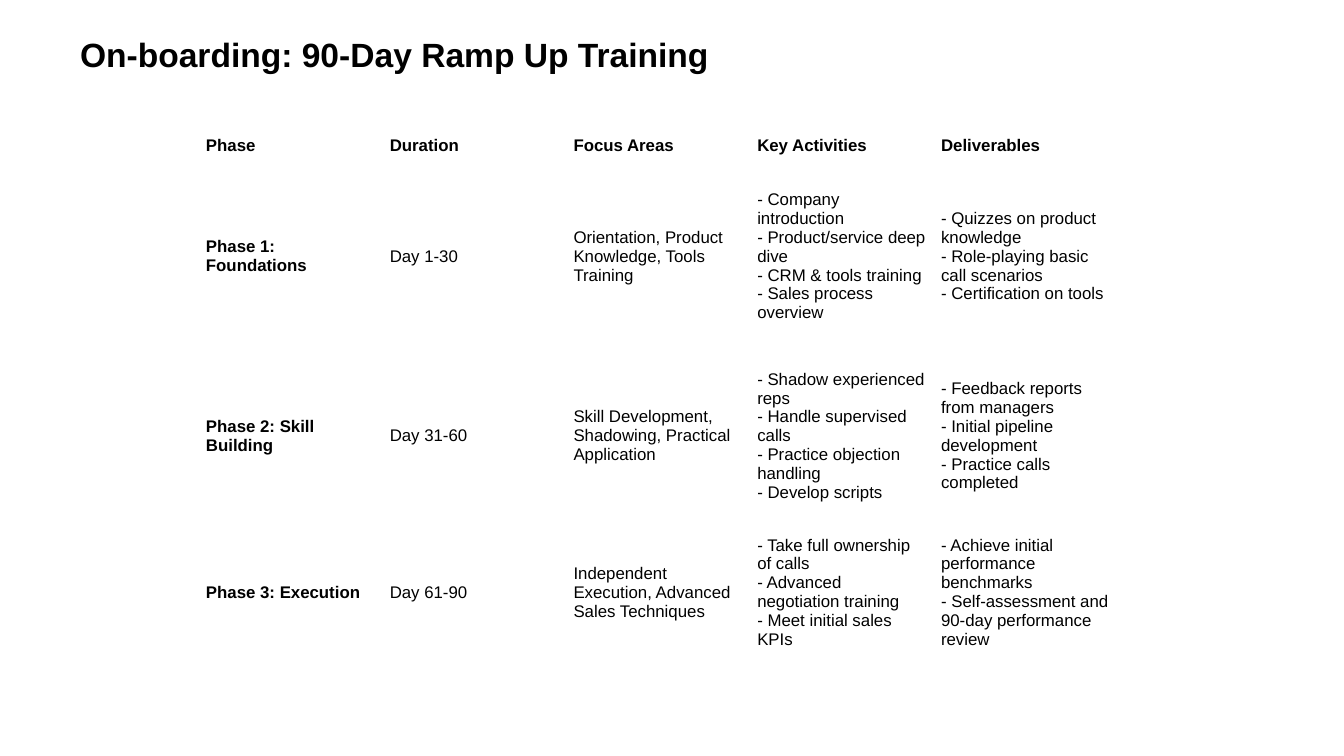
from pptx import Presentation
from pptx.dml.color import RGBColor
from pptx.enum.text import MSO_ANCHOR, PP_ALIGN
from pptx.util import Emu, Pt

MIDDLE = MSO_ANCHOR.MIDDLE
TOP = MSO_ANCHOR.TOP
LEFT = PP_ALIGN.LEFT

BLACK = RGBColor(0x00, 0x00, 0x00)
FONT = "Arial"
EMU_PER_PX = 9144000 / 1344
TITLE_ONLY = 5

TITLE_BOX = (67, 24, 1210, 83)
TABLE_BOX = (199, 130, 919, 535)
ROW_HEIGHTS = (31, 191, 168, 145)

HEADINGS = ("Phase", "Duration", "Focus Areas", "Key Activities", "Deliverables")
PHASES = (
    ("Phase 1: Foundations", "Day 1-30",
     "Orientation, Product Knowledge, Tools Training",
     "- Company introduction\n- Product/service deep dive\n"
     "- CRM & tools training\n- Sales process overview",
     "- Quizzes on product knowledge\n- Role-playing basic call scenarios\n"
     "- Certification on tools"),
    ("Phase 2: Skill Building", "Day 31-60",
     "Skill Development, Shadowing, Practical Application",
     "- Shadow experienced reps\n- Handle supervised calls\n"
     "- Practice objection handling\n- Develop scripts",
     "- Feedback reports from managers\n- Initial pipeline development\n"
     "- Practice calls completed"),
    ("Phase 3: Execution", "Day 61-90",
     "Independent Execution, Advanced Sales Techniques",
     "- Take full ownership of calls\n- Advanced negotiation training\n"
     "- Meet initial sales KPIs",
     "- Achieve initial performance benchmarks\n"
     "- Self-assessment and 90-day performance review"),
)


def px(length):
    return Emu(round(length * EMU_PER_PX))


def write(paragraph, text, size, bold):
    """Add one run per line, with line breaks between them."""
    paragraph.alignment = LEFT
    paragraph.line_spacing = 1.0
    paragraph.space_before = Pt(0)
    for index, line in enumerate(text.split("\n")):
        if index:
            paragraph.add_line_break()
        run = paragraph.add_run()
        run.text = line
        run.font.name = FONT
        run.font.size = Pt(size)
        run.font.bold = bold
        run.font.color.rgb = BLACK


def add_title(slide, box, text):
    title = slide.shapes.title
    title.left, title.top, title.width, title.height = map(px, box)
    frame = title.text_frame
    frame.word_wrap = True
    frame.vertical_anchor = TOP
    frame.margin_left = frame.margin_right = px(13)
    frame.margin_top = frame.margin_bottom = px(10)
    write(frame.paragraphs[0], text, 18, True)


def add_phase_table(slide, box, rows):
    table = slide.shapes.add_table(len(rows), len(rows[0]), *map(px, box)).table
    table.first_row = table.horz_banding = False
    for column in table.columns:
        column.width = px(box[2] / len(rows[0]))
    for row, height in zip(table.rows, ROW_HEIGHTS):
        row.height = px(height)
    for row_index, texts in enumerate(rows):
        for column_index, text in enumerate(texts):
            cell = table.cell(row_index, column_index)
            cell.fill.background()
            cell.vertical_anchor = MIDDLE
            cell.margin_left = cell.margin_right = px(7)
            cell.margin_top = cell.margin_bottom = px(4)
            bold = row_index == 0 or column_index == 0
            write(cell.text_frame.paragraphs[0], text, 9, bold)


def main():
    presentation = Presentation()
    presentation.slide_width = px(1344)
    presentation.slide_height = px(756)
    slide = presentation.slides.add_slide(presentation.slide_layouts[TITLE_ONLY])
    add_title(slide, TITLE_BOX, "On-boarding: 90-Day Ramp Up Training")
    add_phase_table(slide, TABLE_BOX, (HEADINGS, *PHASES))
    presentation.save("out.pptx")


if __name__ == "__main__":
    main()
